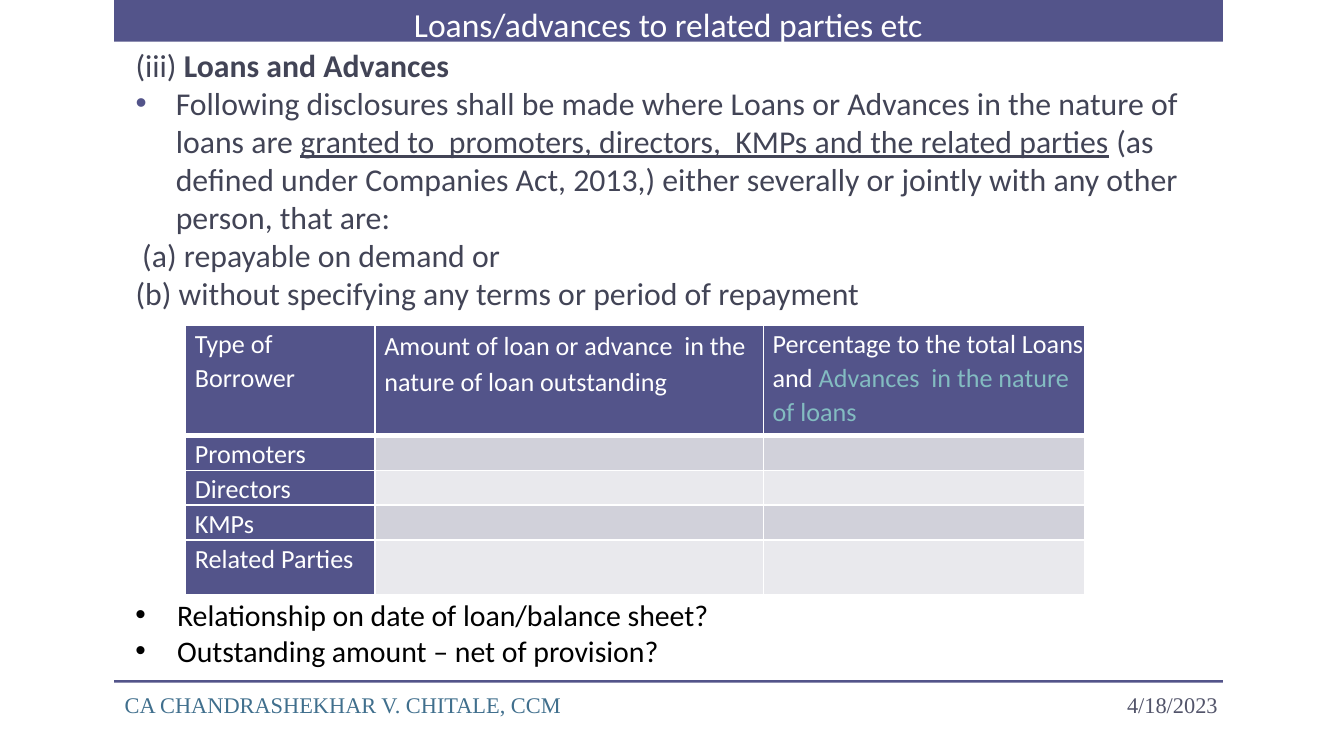
from lxml import etree
from pptx import Presentation
from pptx.dml.color import RGBColor
from pptx.enum import shapes, text
from pptx.oxml import ns
from pptx.util import Inches, Pt

INDIGO, SLATE, WHITE = "53548A", "424456", "FFFFFF"


def add_spans(para, spans, size, color, font="Calibri"):
    """Add (words, overrides) runs; overrides may hold bold, underline, color."""
    for words, style in spans:
        span = para.add_run()
        span.text = words
        span.font.name = font
        span.font.size = Pt(size)
        span.font.bold = style.get("bold")
        span.font.underline = style.get("underline")
        span.font.color.rgb = RGBColor.from_string(style.get("color", color))


def set_indent(para, left, first, bullet_color=None):
    props = para._p.get_or_add_pPr()
    props.set("marL", str(Inches(left)))
    props.set("indent", str(Inches(first)))
    if bullet_color:
        color = etree.SubElement(props, ns.qn("a:buClr"))
        etree.SubElement(color, ns.qn("a:srgbClr"), val=bullet_color)
        etree.SubElement(props, ns.qn("a:buFont"), typeface="Arial")
        etree.SubElement(props, ns.qn("a:buChar"), char="•")


deck = Presentation()
deck.slide_width = Inches(10)
deck.slide_height = deck.slide_width * 9 // 16
page = deck.slides.add_slide(deck.slide_layouts[5])

# Title band and footer rule
for top, height in ((0, 0.31), (5.06, 0.02)):
    band = page.shapes.add_shape(shapes.MSO_SHAPE.RECTANGLE, Inches(0.85), Inches(top),
                                 Inches(8.25), Inches(height))
    band.shadow.inherit = False
    band.fill.solid()
    band.fill.fore_color.rgb = RGBColor.from_string(INDIGO)
    band.line.fill.background()

# Title, moved in front of its band
title = page.shapes.title
page.shapes._spTree.append(title._element)
title.left, title.top = Inches(2.98), Inches(-0.02)
title.width, title.height = Inches(4.03), Inches(0.4)
title.text_frame.vertical_anchor = text.MSO_ANCHOR.TOP
title.text_frame.word_wrap = True
title_para = title.text_frame.paragraphs[0]
title_para.alignment = text.PP_ALIGN.LEFT
add_spans(title_para, [("Loans/advances to related parties etc", {})], 18, WHITE)

# Text blocks: place, size, colour, paragraphs of (indent, spans)
bullet = (0.31, -0.31, "000000")
blocks = [
    ((0.91, 0.29, 8.25, 3.84), 17, SLATE, [
        ((0, 0), [("(iii) ", {}), ("Loans and Advances", {"bold": True})]),
        ((0.3, -0.3, INDIGO), [
            ("Following disclosures shall be made where Loans or Advances in the nature of "
             "loans are ", {}),
            ("granted to  promoters, directors,  KMPs and the related parties",
             {"underline": True}),
            (" (as defined under Companies Act, 2013,) either severally or jointly with any "
             "other person, that are:", {})]),
        ((0.05, 0), [("(a) repayable on demand or", {})]),
        ((0, 0), [("(b) without specifying any terms or period of repayment", {})])]),
    ((0.91, 4.39, 6.3, 0.64), 16, "000000", [
        (bullet, [("Relationship on date of loan/balance sheet?", {})]),
        (bullet, [("Outstanding amount – net of provision?", {})])]),
]
for place, size, color, paras in blocks:
    box = page.shapes.add_textbox(*map(Inches, place))
    box.text_frame.word_wrap = True
    for index, (indent, spans) in enumerate(paras):
        para = box.text_frame.add_paragraph() if index else box.text_frame.paragraphs[0]
        set_indent(para, *indent)
        add_spans(para, spans, size, color)

# Borrower table
columns, heights = [1.41, 2.89, 2.39], [0.82, 0.22, 0.22, 0.22, 0.41]
header = [
    [("Type of Borrower", {})],
    [("Amount of loan or advance  in the nature of loan outstanding", {})],
    [("Percentage to the total Loans and ", {}),
     ("Advances  in the nature of loans", {"color": "83BCC1"})],
]
borrowers = ["Promoters", "Directors", "KMPs", "Related Parties"]
rows = [header] + [[[(name, {})], [], []] for name in borrowers]
table = page.shapes.add_table(len(rows), len(columns), Inches(1.38), Inches(2.42),
                              Inches(sum(columns)), Inches(sum(heights))).table
for column, width in zip(table.columns, columns):
    column.width = Inches(width)
for r, spans_by_column in enumerate(rows):
    table.rows[r].height = Inches(heights[r])
    for c, spans in enumerate(spans_by_column):
        cell = table.cell(r, c)
        cell.margin_left, cell.margin_top = Inches(0.07), Inches(0.01)
        cell.margin_right = cell.margin_bottom = 0
        para = cell.text_frame.paragraphs[0]
        if spans:
            set_indent(para, 0, -0.01)
            para.line_spacing = 1.13 if (r, c) == (0, 1) else 1.07
            add_spans(para, spans, 14, WHITE)
        else:
            etree.SubElement(para._p, ns.qn("a:endParaRPr"), sz="1200")
        props = cell._tc.get_or_add_tcPr()
        for side in "LRTB":
            thick = (r, side) in ((0, "B"), (1, "T"))
            line = etree.SubElement(props, ns.qn("a:ln" + side), w=str(Pt(3 if thick else 1)))
            fill = etree.SubElement(line, ns.qn("a:solidFill"))
            etree.SubElement(fill, ns.qn("a:srgbClr"), val=WHITE)
        cell.fill.solid()
        shade = INDIGO if r == 0 or c == 0 else "D1D1DA" if r % 2 else "E9E9ED"
        cell.fill.fore_color.rgb = RGBColor.from_string(shade)

# Footer
for left, width, words, color, side in (
        (6.83, 2.33, "4/18/2023", "52546A", text.PP_ALIGN.RIGHT),
        (0.83, 5.33, "CA CHANDRASHEKHAR V. CHITALE, CCM", "406F8D", text.PP_ALIGN.LEFT)):
    box = page.shapes.add_textbox(Inches(left), Inches(5.09), Inches(width), Inches(0.3))
    box.text_frame.word_wrap = True
    box.text_frame.vertical_anchor = text.MSO_ANCHOR.MIDDLE
    para = box.text_frame.paragraphs[0]
    para.alignment = side
    add_spans(para, [(words, {})], 12, color, "Times New Roman")

deck.save("out.pptx")
